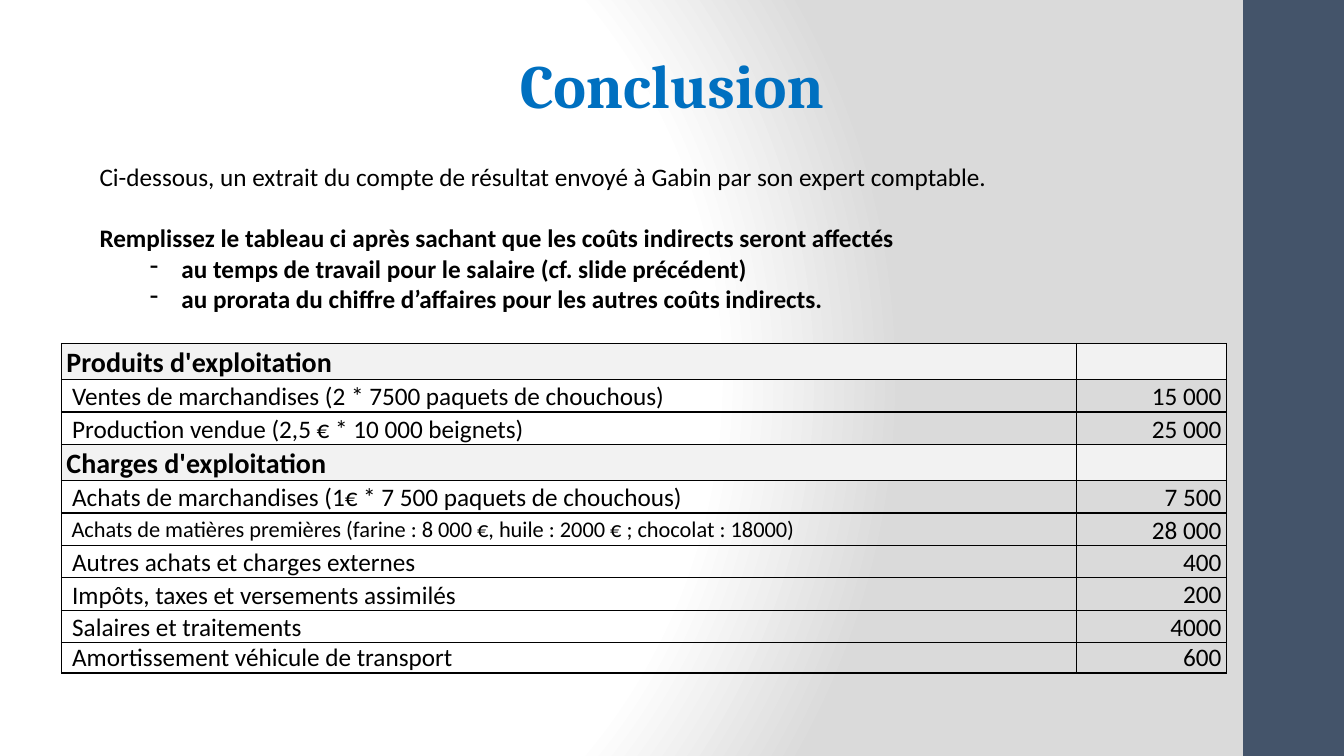
from pptx import Presentation
from pptx.dml.color import RGBColor
from pptx.enum import shapes, text
from pptx.oxml import parse_xml
from pptx.oxml.ns import nsdecls
from pptx.util import Pt

COLORS = {
    "band": "44546A", "title": "0070C0", "text": "000000",
    "heading": "F2F2F2", "white": "FFFFFF", "grey": "DADADA",
}
LEFT, CENTER, RIGHT = text.PP_ALIGN.LEFT, text.PP_ALIGN.CENTER, text.PP_ALIGN.RIGHT
TOP, MIDDLE, BOTTOM = text.MSO_ANCHOR.TOP, text.MSO_ANCHOR.MIDDLE, text.MSO_ANCHOR.BOTTOM


def rgb(name):
    return RGBColor.from_string(COLORS[name])


def write(paragraph, content, size=18, font="Calibri", color="text", bold=False,
          align=LEFT, spacing=None, before=0, bullet=None):
    if bullet:
        properties = paragraph._p.get_or_add_pPr()
        properties.set("marL", str(Pt(58.5)))
        properties.set("indent", str(Pt(-22.5)))
        properties.append(parse_xml(f'<a:buChar {nsdecls("a")} char="{bullet}"/>'))
    paragraph.alignment = align
    if spacing:
        paragraph.line_spacing = spacing
    if before:
        paragraph.space_before = Pt(before)
    run = paragraph.add_run()
    run.text = content
    run.font.size = Pt(size)
    run.font.name = font
    run.font.bold = bold
    run.font.color.rgb = rgb(color)


class SlideBuilder:
    def __init__(self, slide):
        self.slide = slide

    def background(self):
        stops = "".join(
            f'<a:gs pos="{percent * 1000}"><a:srgbClr val="{COLORS[name]}"/></a:gs>'
            for percent, name in [(0, "white"), (75, "white"), (100, "grey")])
        self.slide.element.cSld.insert(0, parse_xml(
            f'<p:bg {nsdecls("p", "a")}><p:bgPr><a:gradFill rotWithShape="1">'
            f'<a:gsLst>{stops}</a:gsLst><a:path path="circle">'
            '<a:fillToRect l="20000" t="50000" r="100000" b="50000"/></a:path>'
            '</a:gradFill><a:effectLst/></p:bgPr></p:bg>'))

    def rectangle(self, left, top, width, height, fill):
        shape = self.slide.shapes.add_shape(
            shapes.MSO_SHAPE.RECTANGLE, Pt(left), Pt(top), Pt(width), Pt(height))
        shape.shadow.inherit = False
        shape.fill.solid()
        shape.fill.fore_color.rgb = rgb(fill)
        shape.line.fill.background()

    def textbox(self, left, top, width, height, paragraphs, anchor=TOP, side=7.2):
        box = self.slide.shapes.add_textbox(Pt(left), Pt(top), Pt(width), Pt(height))
        frame = box.text_frame
        frame.word_wrap = True
        frame.vertical_anchor = anchor
        frame.margin_left = frame.margin_right = Pt(side)
        for index, (content, style) in enumerate(paragraphs):
            paragraph = frame.add_paragraph() if index else frame.paragraphs[0]
            write(paragraph, content, **style)

    def cell(self, cell, fill=None, anchor=BOTTOM):
        properties = cell._tc.get_or_add_tcPr()
        for side in "LRTB":
            properties.append(parse_xml(
                f'<a:ln{side} {nsdecls("a")} w="{Pt(1)}"><a:solidFill>'
                f'<a:srgbClr val="{COLORS["text"]}"/></a:solidFill></a:ln{side}>'))
        if fill:
            cell.fill.solid()
            cell.fill.fore_color.rgb = rgb(fill)
        else:
            cell.fill.background()
        cell.margin_left = cell.margin_right = Pt(3.5)
        cell.margin_top = cell.margin_bottom = 0
        cell.vertical_anchor = anchor

    def accounts(self, left, top, widths, rows):
        heights = [23.2 if amount else 25.7 for _, amount, _ in rows]
        heights[-1] = 21.4
        table = self.slide.shapes.add_table(
            len(rows), len(widths), Pt(left), Pt(top),
            Pt(sum(widths)), Pt(sum(heights))).table
        table.first_row = table.horz_banding = False
        for column, width in zip(table.columns, widths):
            column.width = Pt(width)
        for index, (label, amount, size) in enumerate(rows):
            table.rows[index].height = Pt(heights[index])
            spacing = None if index == len(rows) - 1 else 1.07
            label_cell, amount_cell = table.cell(index, 0), table.cell(index, 1)
            fill = None if amount else "heading"
            self.cell(label_cell, fill, MIDDLE if amount else BOTTOM)
            self.cell(amount_cell, fill)
            write(label_cell.text_frame.paragraphs[0], label, size=size,
                  bold=not amount, spacing=spacing)
            if amount:
                write(amount_cell.text_frame.paragraphs[0], amount,
                      align=RIGHT, spacing=spacing)


def main():
    presentation = Presentation()
    presentation.slide_width, presentation.slide_height = Pt(960), Pt(540)
    builder = SlideBuilder(presentation.slides.add_slide(presentation.slide_layouts[6]))

    # Background and side band
    builder.background()
    builder.rectangle(888, 0, 72, 540, "band")

    # Title
    builder.textbox(167, 0, 626, 90, [
        ("Conclusion", dict(size=44, font="Cambria", color="title", bold=True,
                            align=CENTER))], anchor=BOTTOM, side=0)

    # Instructions
    builder.textbox(64, 112, 832, 116, [
        ("Ci-dessous, un extrait du compte de résultat envoyé à Gabin par son expert comptable.", {}),
        ("Remplissez le tableau ci après sachant que les coûts indirects seront affectés",
         dict(bold=True, before=22)),
        ("au temps de travail pour le salaire (cf. slide précédent)",
         dict(bold=True, bullet="-")),
        ("au prorata du chiffre d’affaires pour les autres coûts indirects.",
         dict(bold=True, bullet="-")),
    ])

    # Income statement: label, amount, label size
    builder.accounts(44, 245.4, [725, 107], [
        ("Produits d'exploitation", "", 20),
        (" Ventes de marchandises (2 * 7500 paquets de chouchous)", "15 000", 18),
        (" Production vendue (2,5 € * 10 000 beignets)", "25 000", 18),
        ("Charges d'exploitation", "", 20),
        (" Achats de marchandises (1€ * 7 500 paquets de chouchous)", "7 500", 18),
        (" Achats de matières premières (farine : 8 000 €, huile : 2000 € ; chocolat : 18000)",
         "28 000", 16),
        (" Autres achats et charges externes", "400", 18),
        (" Impôts, taxes et versements assimilés", "200", 18),
        (" Salaires et traitements", "4000", 18),
        (" Amortissement véhicule de transport", "600", 18),
    ])

    presentation.save("out.pptx")


if __name__ == "__main__":
    main()
